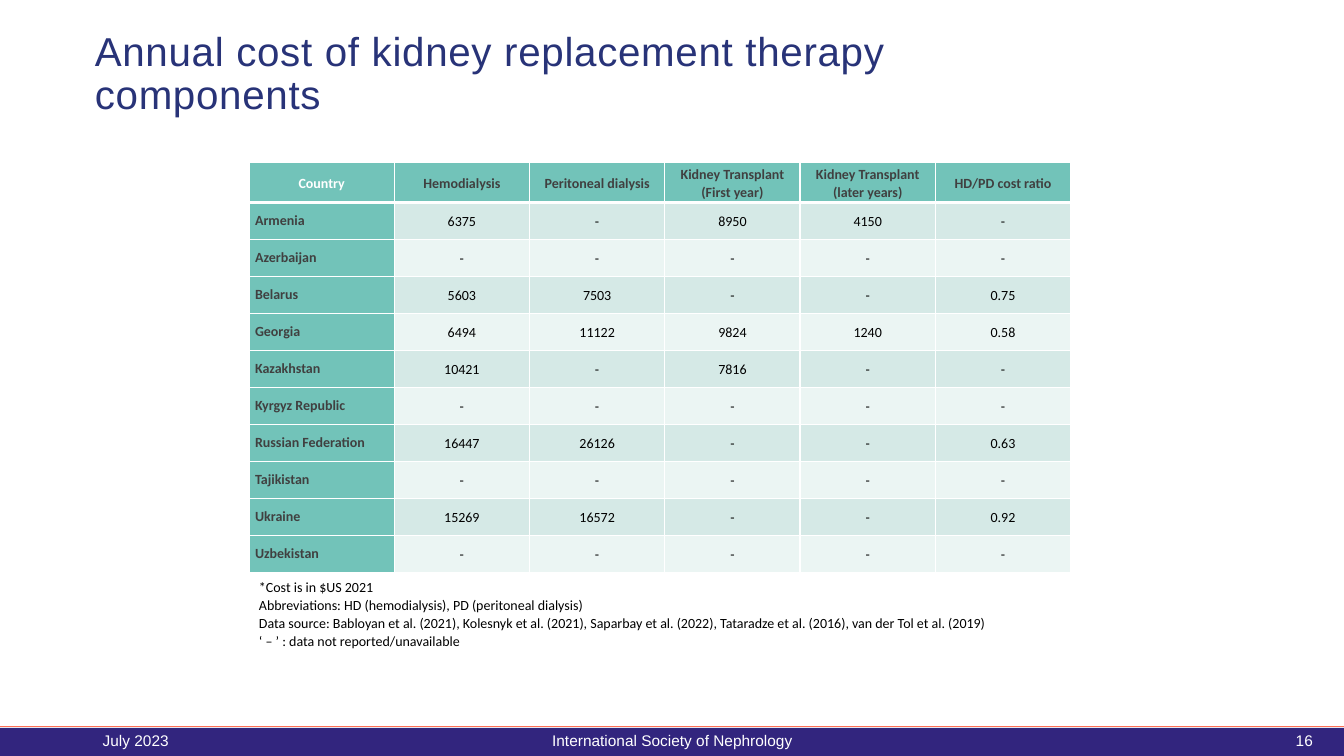
from lxml.etree import SubElement
from pptx import Presentation
from pptx.dml.color import RGBColor
from pptx.enum.shapes import MSO_CONNECTOR as Connector, MSO_SHAPE as Shape
from pptx.enum.text import MSO_ANCHOR as Anchor, MSO_AUTO_SIZE as AutoSize, PP_ALIGN as Align
from pptx.oxml import parse_xml
from pptx.oxml.ns import nsdecls, qn
from pptx.util import Inches, Pt

TEAL, NAVY, PURPLE, CORAL = "72C3B9", "283378", "32257E", "FE7055"
WHITE, BLACK, GREY = "FFFFFF", "000000", "404040"
BANDS = ["D5E9E6", "EBF5F3"]


def color(hex_string):
    return RGBColor.from_string(hex_string)


def write(frame, lines, font, align=Align.LEFT, spacing=None):
    """Fill a text frame with one formatted paragraph per line."""
    frame.word_wrap = True
    for index, line in enumerate(lines):
        paragraph = frame.add_paragraph() if index else frame.paragraphs[0]
        paragraph.alignment = align
        paragraph.line_spacing = spacing
        run = paragraph.add_run()
        run.text = line
        for name, value in font.items():
            if name == "color":
                run.font.color.rgb = color(value)
            else:
                setattr(run.font, name, value)


presentation = Presentation()
presentation.slide_width, presentation.slide_height = Inches(13.33), Inches(7.5)
slide = presentation.slides.add_slide(presentation.slide_layouts[5])
shapes = slide.shapes

# Footer band and rule
band = shapes.add_shape(Shape.RECTANGLE, 0, Inches(7.22), presentation.slide_width, Inches(0.28))
band.shadow.inherit = False
band.fill.solid()
band.fill.fore_color.rgb = color(PURPLE)
band.line.fill.background()
rule = shapes.add_connector(Connector.STRAIGHT, 0, Inches(7.21),
                            presentation.slide_width, Inches(7.21))
rule.line.color.rgb = color(CORAL)
rule.line.width = Pt(0.75)
SubElement(rule._element.spPr, qn("a:effectLst"))

# Cost table
headings = ["Country", "Hemodialysis", "Peritoneal dialysis", "Kidney Transplant\n(First year)",
            "Kidney Transplant\n(later years)", "HD/PD cost ratio"]
costs = [
    ["Armenia", "6375", "-", "8950", "4150", "-"],
    ["Azerbaijan", "-", "-", "-", "-", "-"],
    ["Belarus", "5603", "7503", "-", "-", "0.75"],
    ["Georgia", "6494", "11122", "9824", "1240", "0.58"],
    ["Kazakhstan", "10421", "-", "7816", "-", "-"],
    ["Kyrgyz Republic", "-", "-", "-", "-", "-"],
    ["Russian Federation", "16447", "26126", "-", "-", "0.63"],
    ["Tajikistan", "-", "-", "-", "-", "-"],
    ["Ukraine", "15269", "16572", "-", "-", "0.92"],
    ["Uzbekistan", "-", "-", "-", "-", "-"],
]
rows = [headings] + costs
left, top, width, height = 2.47, 1.61, 8.15, 4.07
country_width, header_height = 1.44, 0.4
table = shapes.add_table(len(rows), len(headings), Inches(left), Inches(top),
                         Inches(width), Inches(height)).table
table.horz_banding = False
for index, column in enumerate(table.columns):
    column.width = Inches((width - country_width) / (len(headings) - 1) if index else country_width)
for index, row in enumerate(table.rows):
    row.height = Inches((height - header_height) / len(costs) if index else header_height)

for row_index, row in enumerate(rows):
    for column_index, text in enumerate(row):
        cell = table.cell(row_index, column_index)
        is_header, is_country = row_index == 0, column_index == 0
        is_label = is_header or is_country
        side = 0.03 if is_header else 0.06 if is_country else 0.01
        margins = {"margin_left": side, "margin_right": side, "margin_bottom": 0,
                   "margin_top": 0 if is_country and not is_header else 0.01}
        for name, value in margins.items():
            setattr(cell, name, Inches(value))
        cell.vertical_anchor = Anchor.MIDDLE
        text_color = WHITE if is_header and is_country else GREY if is_label else BLACK
        write(cell.text_frame, text.split("\n"),
              {"name": "Calibri", "size": Pt(10), "bold": is_label, "color": text_color},
              Align.LEFT if is_country and not is_header else Align.CENTER,
              1.06 if is_header else None)
        cell.fill.solid()
        cell.fill.fore_color.rgb = color(TEAL if is_label else BANDS[(row_index - 1) % 2])
        # White borders, thick between header and body
        thick = {"B": 0, "T": 1}
        for position, edge in enumerate("LRTB"):
            points = 3 if thick.get(edge) == row_index else 1
            cell._tc.tcPr.insert(position, parse_xml(
                f'<a:ln{edge} {nsdecls("a")} w="{Pt(points)}"><a:solidFill>'
                f'<a:srgbClr val="{WHITE}"/></a:solidFill></a:ln{edge}>'))

# Notes under the table
notes = shapes.add_textbox(Inches(left), Inches(5.68), Inches(8.25), Inches(0.82))
write(notes.text_frame, [
    "*Cost is in $US 2021",
    "Abbreviations: HD (hemodialysis), PD (peritoneal dialysis)",
    "Data source: Babloyan et al. (2021), Kolesnyk et al. (2021), Saparbay et al. (2022), "
    "Tataradze et al. (2016), van der Tol et al. (2019)",
    "‘ – ’ : data not reported/unavailable",
], {"name": "Calibri", "size": Pt(10), "color": BLACK}, spacing=1.07)

# Title
title = shapes.title
title.left, title.top, title.width, title.height = map(Inches, (0.84, 0.39, 9.26, 0.71))
title.text_frame.auto_size = AutoSize.NONE
title.text_frame.vertical_anchor = Anchor.MIDDLE
write(title.text_frame, ["Annual cost of kidney replacement therapy components"],
      {"name": "Arial", "size": Pt(28.8), "color": NAVY}, spacing=0.9)
title.text_frame.paragraphs[0].runs[0].font._element.set("spc", "50")

# Footer texts
for text, footer_left, footer_width, align in [
    ("July 2023", 0.92, 3, Align.LEFT),
    ("International Society of Nephrology", 4.42, 4.5, Align.CENTER),
    ("16", 9.42, 3.7, Align.RIGHT),
]:
    footer = shapes.add_textbox(Inches(footer_left), Inches(7.15), Inches(footer_width), Inches(0.4))
    footer.text_frame.vertical_anchor = Anchor.MIDDLE
    write(footer.text_frame, [text], {"name": "Arial", "size": Pt(11), "color": WHITE}, align)

presentation.save("out.pptx")
